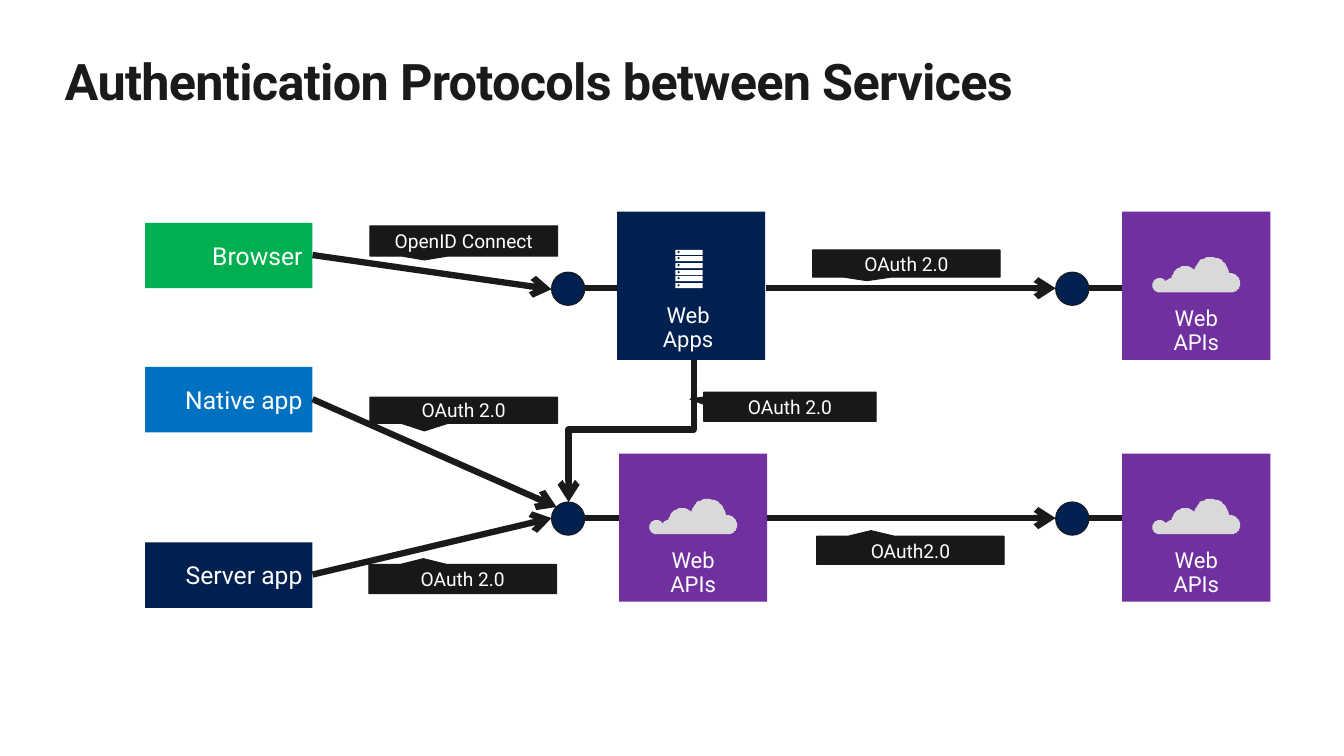
import pptx
import pptx.dml.color
import pptx.enum.shapes
import pptx.enum.text
import pptx.oxml
import pptx.oxml.ns
import pptx.util

PX = 9144  # 100 px to the inch
FONT = "Roboto"
INK, LABEL, WHITE = "1A1A1A", "181818", "FFFFFF"
NAVY, PURPLE, GREEN, BLUE, GREY = "002050", "7030A0", "00B050", "0070C0", "D9D9D9"
SHAPE = pptx.enum.shapes.MSO_SHAPE
CONNECTOR = pptx.enum.shapes.MSO_CONNECTOR
ALIGN = pptx.enum.text.PP_ALIGN
ANCHOR = pptx.enum.text.MSO_ANCHOR

TILE = 147
NODE = 33
CLOUD_START = (77, 16)
CLOUD_CURVES = [
    ((77, 16), (76, 16), (76, 17)),
    ((75, 7), (68, 0), (58, 0)),
    ((50, 0), (43, 5), (42, 13)),
    ((39, 10), (36, 9), (32, 9)),
    ((26, 9), (20, 14), (19, 21)),
    ((17, 21), (15, 22), (13, 24)),
    ((12, 22), (10, 21), (7, 21)),
    ((3, 21), (0, 24), (0, 28)),
    ((0, 32), (3, 35), (7, 35)),
    ((30, 35), (54, 35), (78, 35)),
    ((83, 35), (87, 31), (87, 26)),
    ((87, 21), (82, 16), (77, 16)),
]


def px(*lengths):
    return [pptx.util.Emu(n * PX) for n in lengths]


def rgb(color):
    return pptx.dml.color.RGBColor.from_string(color)


def paint(sp, fill, line=None):
    sp.shadow.inherit = False
    sp.fill.solid()
    sp.fill.fore_color.rgb = rgb(fill)
    if line:
        sp.line.color.rgb = rgb(line)
        sp.line.width = pptx.util.Pt(0.75)
    else:
        sp.line.fill.background()


def write(sp, text, size, color=WHITE, align=ALIGN.CENTER, anchor=ANCHOR.MIDDLE,
          inset=(0, 0), bold=False):
    tf = sp.text_frame
    tf.text = text
    tf.word_wrap = True
    tf.vertical_anchor = anchor
    tf.margin_left = tf.margin_right = px(inset[0])[0]
    tf.margin_top = tf.margin_bottom = px(inset[1])[0]
    p = tf.paragraphs[0]
    p.alignment = align
    r = p.runs[0]
    r.font.name = FONT
    r.font.size = pptx.util.Pt(size)
    r.font.bold = bold
    r.font.color.rgb = rgb(color)
    return p


def add_title(slide, text):
    title = slide.shapes.title
    title.left, title.top, title.width, title.height = px(64, 50, 1205, 61)
    p = write(title, text, 36, INK, ALIGN.LEFT, ANCHOR.TOP, bold=True)
    title.text_frame.auto_size = pptx.enum.text.MSO_AUTO_SIZE.NONE
    p.runs[0].font._element.set("spc", "-50")


def add_client(slide, y, text, fill):
    sp = slide.shapes.add_shape(SHAPE.RECTANGLE, *px(144, y, 166, 65))
    paint(sp, fill)
    write(sp, text, 17.6, align=ALIGN.RIGHT, inset=(10, 5))


def add_link(slide, start, end, arrow=True, kind=CONNECTOR.STRAIGHT):
    cxn = slide.shapes.add_connector(kind, *px(*start, *end))
    cxn.line.color.rgb = rgb(INK)
    cxn.line.width = pptx.util.Pt(4.5)
    if arrow:
        tail = pptx.oxml.parse_xml(
            '<a:tailEnd %s type="arrow"/>' % pptx.oxml.ns.nsdecls("a"))
        cxn.line._get_or_add_ln().append(tail)
    cxn._element.spPr.append(pptx.oxml.parse_xml(
        "<a:effectLst %s/>" % pptx.oxml.ns.nsdecls("a")))
    return cxn


def add_down_elbow(slide, start, end):
    """Leave downwards, cross to the left, and arrive downwards."""
    (x1, y1), (x2, y2) = start, end
    cx, cy = (x1 + x2) / 2, (y1 + y2) / 2
    half_w, half_h = (y2 - y1) / 2, (x1 - x2) / 2
    cxn = add_link(slide, (round(cx - half_w), round(cy - half_h)),
                   (round(cx + half_w), round(cy + half_h)), kind=CONNECTOR.ELBOW)
    cxn._element.spPr.find(pptx.oxml.ns.qn("a:xfrm")).set("rot", "5400000")


def add_node(slide, x, y):
    """A round endpoint with the short line that joins it to its tile."""
    sp = slide.shapes.add_shape(SHAPE.OVAL, *px(x, y, NODE, NODE))
    paint(sp, NAVY, INK)
    mid = y + NODE // 2
    add_link(slide, (x + NODE, mid), (x + NODE + 34, mid), arrow=False)


def add_callout(slide, x, y, w, h, text, tip):
    sp = slide.shapes.add_shape(SHAPE.RECTANGULAR_CALLOUT, *px(x, y, w, h))
    sp.adjustments[0], sp.adjustments[1] = tip
    paint(sp, LABEL, INK)
    write(sp, text, 13.7)


def curve_points(start, curves, steps=12):
    points = []
    for c1, c2, end in curves:
        for i in range(1, steps + 1):
            t = i / steps
            u = 1 - t
            points.append(tuple(
                u**3 * a + 3 * u * u * t * b + 3 * u * t * t * c + t**3 * d
                for a, b, c, d in zip(start, c1, c2, end)))
        start = end
    return points


def add_cloud(shapes, x, y):
    outline = [(x + dx, y + dy) for dx, dy in curve_points(CLOUD_START, CLOUD_CURVES)]
    builder = shapes.build_freeform(x + CLOUD_START[0], y + CLOUD_START[1], scale=PX)
    builder.add_line_segments(outline, close=True)
    paint(builder.convert_to_shape(), GREY)


def add_server(shapes, x, y):
    for i in range(6):
        top = y + i * 20 // 3
        slab = shapes.add_shape(SHAPE.RECTANGLE, *px(x, top, 27, 5))
        paint(slab, WHITE)
        light = shapes.add_shape(SHAPE.OVAL, *px(x + 2, top + 1, 2, 2))
        paint(light, NAVY)


def add_tile(slide, x, y, text, fill, add_icon, icon_at, text_at):
    shapes = slide.shapes.add_group_shape().shapes
    paint(shapes.add_shape(SHAPE.RECTANGLE, *px(x, y, TILE, TILE)), fill)
    add_icon(shapes, x + icon_at[0], y + icon_at[1])
    box = shapes.add_textbox(*px(x + text_at[0], y + text_at[1], 129, 79))
    p = write(box, text, 15.7, anchor=ANCHOR.TOP, inset=(20, 16))
    p.line_spacing = 0.9
    p.space_after = pptx.util.Pt(5.9)


def main():
    prs = pptx.Presentation()
    prs.slide_width, prs.slide_height = px(1333, 750)
    slide = prs.slides.add_slide(prs.slide_layouts[5])
    add_title(slide, "Authentication Protocols between Services")

    for y, text, fill in [(221, "Browser", GREEN), (364, "Native app", BLUE),
                          (538, "Server app", NAVY)]:
        add_client(slide, y, text, fill)

    for x in (547, 1047):
        for y in (270, 498):
            add_node(slide, x, y)

    for start, end in [((310, 253), (547, 287)), ((310, 396), (552, 503)),
                       ((310, 570), (547, 514)), ((760, 514), (1047, 514)),
                       ((760, 286), (1047, 286))]:
        add_link(slide, start, end)
    add_down_elbow(slide, (687, 354), (564, 498))

    below, above = (-0.21, 0.63), (-0.21, -0.7)
    for callout in [(367, 224, 186, 30, "OpenID Connect", below),
                    (367, 394, 186, 26, "OAuth 2.0", (-0.21, 0.79)),
                    (366, 560, 186, 29, "OAuth 2.0", above),
                    (698, 389, 171, 29, "OAuth 2.0", (-0.58, -0.26)),
                    (806, 248, 186, 27, "OAuth 2.0", below),
                    (810, 532, 186, 28, "OAuth2.0", above)]:
        add_callout(slide, *callout)

    add_tile(slide, 612, 210, "Web Apps", NAVY, add_server, (58, 38), (6, 76))
    for x, y in [(614, 450), (1113, 450), (1113, 210)]:
        add_tile(slide, x, y, "Web APIs", PURPLE, add_cloud, (30, 45), (9, 79))

    prs.save("out.pptx")


if __name__ == "__main__":
    main()
